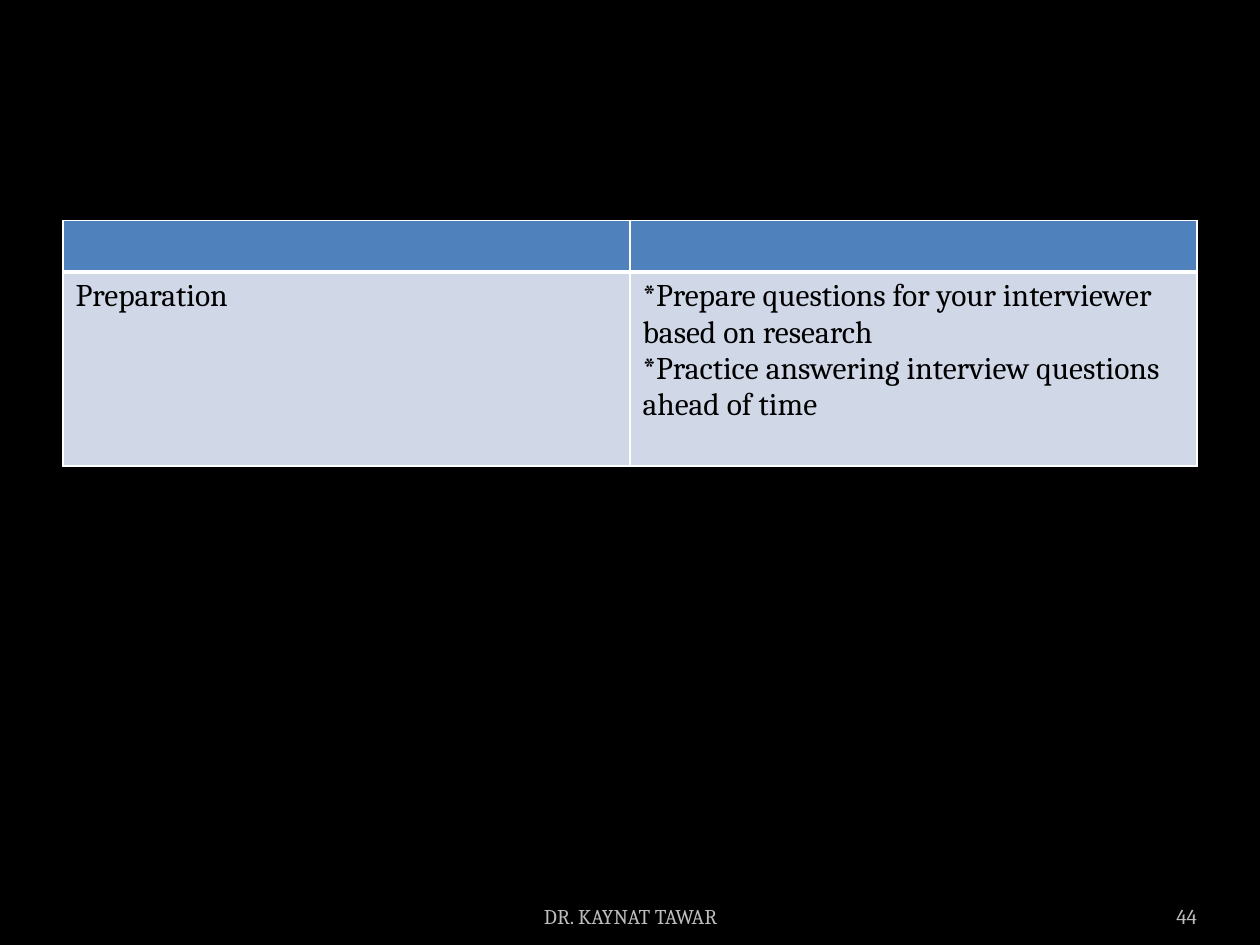
from pptx import Presentation
from pptx.dml.color import RGBColor
from pptx.enum.text import MSO_ANCHOR as ANCHOR, PP_ALIGN as ALIGN
from pptx.oxml import parse_xml
from pptx.oxml.ns import nsdecls
from pptx.util import Inches, Pt


def rgb(color):
    return RGBColor.from_string(color)


def write(tf, text, size=18, color="000000", font="Cambria", align=ALIGN.LEFT):
    """Fill a text frame with one paragraph for each line of text."""
    for i, line in enumerate(text.split("\n")):
        p = tf.paragraphs[0] if i == 0 else tf.add_paragraph()
        p.alignment = align
        p.font.size = Pt(size)
        if line:
            r = p.add_run()
            r.text = line
            r.font.size = Pt(size)
            r.font.name = font
            r.font.color.rgb = rgb(color)


class Deck:
    HEADER, BODY, BORDER, MUTED = "4F81BD", "D0D8E8", "FFFFFF", "BDBDBD"

    def __init__(self, prs, background):
        self.s = prs.slides.add_slide(prs.slide_layouts[6])
        fill = self.s.background.fill
        fill.solid()
        fill.fore_color.rgb = rgb(background)

    def border(self, cell, bottom=1):
        """Outline a cell, with its own width in points at the bottom."""
        tcPr = cell._tc.get_or_add_tcPr()
        for i, (side, width) in enumerate(zip("LRTB", (1, 1, 1, bottom))):
            tcPr.insert(i, parse_xml(
                f'<a:ln{side} {nsdecls("a")} w="{Pt(width)}"><a:solidFill>'
                f'<a:srgbClr val="{self.BORDER}"/></a:solidFill></a:ln{side}>'))

    def table(self, rows, x, y, w, heights):
        frame = self.s.shapes.add_table(len(rows), len(rows[0]), Inches(x), Inches(y),
                                        Inches(w), Inches(sum(heights)))
        table = frame.table
        for i, (texts, height) in enumerate(zip(rows, heights)):
            table.rows[i].height = Inches(height)
            for j, text in enumerate(texts):
                cell = table.cell(i, j)
                cell.fill.solid()
                cell.fill.fore_color.rgb = rgb(self.BODY if i else self.HEADER)
                self.border(cell, bottom=1 if i else 3)
                write(cell.text_frame, text)

    def footer(self, text, x, w, align, inset=0.1):
        box = self.s.shapes.add_textbox(Inches(x), Inches(7.02), Inches(w), Inches(0.4))
        tf = box.text_frame
        tf.word_wrap = True
        tf.vertical_anchor = ANCHOR.BOTTOM
        tf.margin_left = tf.margin_right = Inches(inset)
        write(tf, text, size=12, color=self.MUTED, align=align)


def main():
    prs = Presentation()
    prs.slide_width, prs.slide_height = Inches(10), Inches(7.5)
    deck = Deck(prs, "000000")
    rows = [
        ("", ""),
        ("Preparation",
         "*Prepare questions for your interviewer based on research\n"
         "*Practice answering interview questions ahead of time"),
    ]
    deck.table(rows, 0.5, 1.75, 9, heights=(0.41, 1.54))
    deck.footer("44", 8.67, 0.83, ALIGN.RIGHT, inset=0)
    deck.footer("DR. KAYNAT TAWAR", 3.42, 3.17, ALIGN.CENTER)
    prs.save("out.pptx")


if __name__ == "__main__":
    main()
